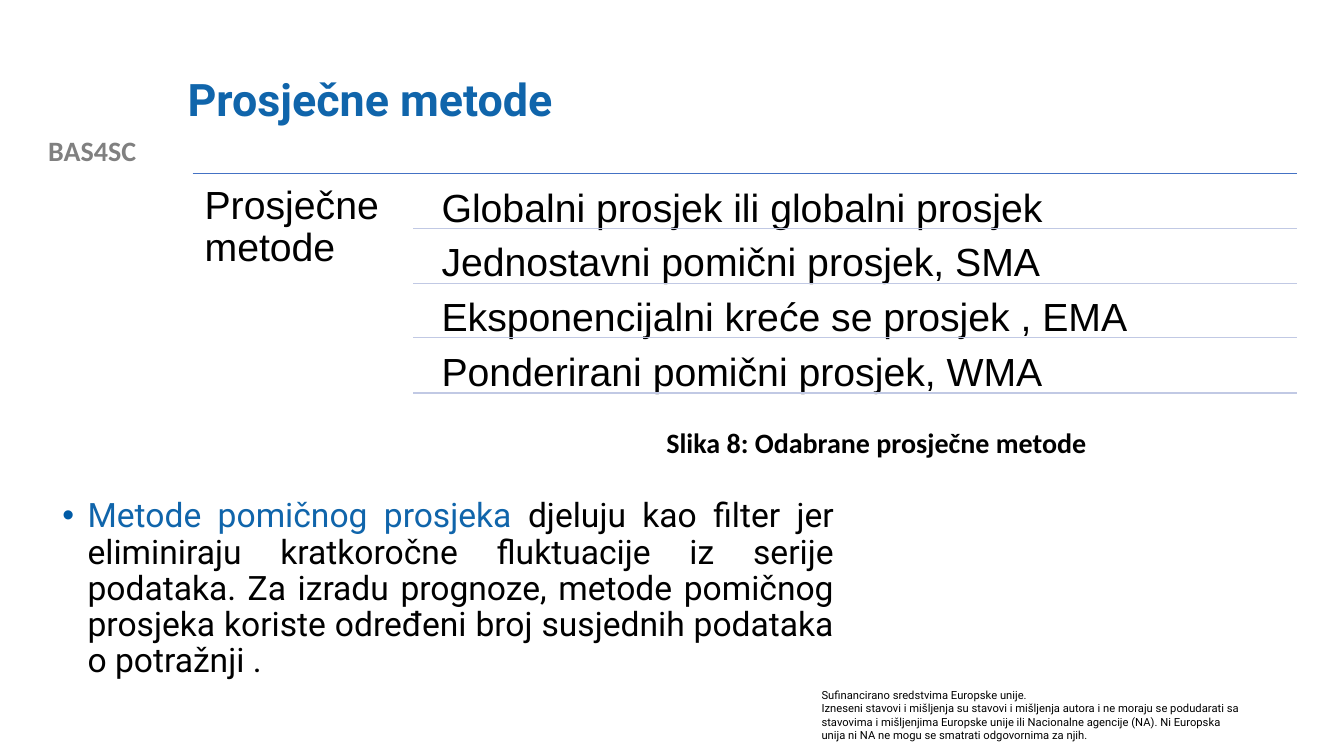
from lxml import etree
from pptx import Presentation
from pptx.dml.color import RGBColor
from pptx.enum.shapes import MSO_CONNECTOR
from pptx.enum.text import MSO_ANCHOR, MSO_AUTO_SIZE, PP_ALIGN
from pptx.oxml.ns import qn
from pptx.util import Pt

LEFT, CENTER, JUSTIFY = PP_ALIGN.LEFT, PP_ALIGN.CENTER, PP_ALIGN.JUSTIFY
TOP, MIDDLE = MSO_ANCHOR.TOP, MSO_ANCHOR.MIDDLE
NO_AUTOFIT = MSO_AUTO_SIZE.NONE
STRAIGHT = MSO_CONNECTOR.STRAIGHT

BLACK = RGBColor(0x00, 0x00, 0x00)
GRAY = RGBColor(0x80, 0x80, 0x80)
BLUE = RGBColor(0x10, 0x65, 0xAB)
BULLET_BLUE = RGBColor(0x01, 0x5B, 0xA6)
TOP_RULE = RGBColor(0x44, 0x72, 0xC4)
ROW_RULE = RGBColor(0xC1, 0xC9, 0xE4)

TITLE = "Prosječne metode"
PROJECT = "BAS4SC"
GROUP = "Prosječne metode"
METHODS = [
    "Globalni prosjek ili globalni prosjek",
    "Jednostavni pomični prosjek, SMA",
    "Eksponencijalni kreće se prosjek , EMA",
    "Ponderirani pomični prosjek, WMA",
]
CAPTION = "Slika 8: Odabrane prosječne metode"
EXPLANATION = [
    ("Metode pomičnog prosjeka ", BLUE),
    ("djeluju kao filter jer eliminiraju kratkoročne fluktuacije iz serije "
     "podataka. Za izradu prognoze, metode pomičnog prosjeka koriste određeni "
     "broj susjednih podataka o potražnji .", BLACK),
]
DISCLAIMER = [
    "Sufinancirano sredstvima Europske unije.",
    "Izneseni stavovi i mišljenja su stavovi i mišljenja autora i ne moraju se "
    "podudarati sa stavovima i mišljenjima Europske unije ili Nacionalne agencije "
    "(NA). Ni Europska unija ni NA ne mogu se smatrati odgovornima za njih.",
]

PX = 9144  # 100 px to the inch
LIST_LEFT, LIST_RIGHT, LIST_TOP = 191, 1286, 172
ROW_LEFT, ROW_RULE_LEFT, ROW_HEIGHT = 426, 410, 52
FIRST_ROW_TOP, LAST_ROW_TOP = 175, 338


def add_bullet(paragraph, color, indent):
    props = paragraph._p.get_or_add_pPr()
    props.set("marL", str(indent * PX))
    props.set("indent", str(-indent * PX))
    bullet_color = etree.SubElement(props, qn("a:buClr"))
    etree.SubElement(bullet_color, qn("a:srgbClr"), val=str(color))
    etree.SubElement(props, qn("a:buFont"), typeface="Arial")
    etree.SubElement(props, qn("a:buChar"), char="•")


def put_text(paragraphs, box, *, size, font, color=BLACK, bold=False, align=LEFT,
             anchor=TOP, spacing=1.0, inset=(10, 5), bullet=None, holder=None):
    """Each paragraph is a string or a list of (text, colour) runs."""
    left, top, width, height = (n * PX for n in box)
    if holder is None:
        holder = slide.shapes.add_textbox(left, top, width, height)
    else:
        holder.left, holder.top, holder.width, holder.height = left, top, width, height
    frame = holder.text_frame
    frame.word_wrap = True
    frame.auto_size = NO_AUTOFIT
    frame.vertical_anchor = anchor
    frame.margin_left = frame.margin_right = inset[0] * PX
    frame.margin_top = frame.margin_bottom = inset[1] * PX
    for i, content in enumerate(paragraphs):
        paragraph = frame.add_paragraph() if i else frame.paragraphs[0]
        if bullet is not None:
            add_bullet(paragraph, bullet, 25)
        paragraph.alignment = align
        paragraph.line_spacing = spacing
        runs = [(content, color)] if isinstance(content, str) else content
        for text, run_color in runs:
            run = paragraph.add_run()
            run.text = text
            run.font.size = Pt(size)
            run.font.name = font
            run.font.bold = bold
            run.font.color.rgb = run_color


def add_rule(left, y, color):
    rule = slide.shapes.add_connector(STRAIGHT, left * PX, y * PX, LIST_RIGHT * PX, y * PX)
    rule.line.color.rgb = color
    rule.line.width = Pt(1)
    etree.SubElement(rule._element.spPr, qn("a:effectLst"))


prs = Presentation()
prs.slide_width, prs.slide_height = 1333 * PX, 750 * PX
slide = prs.slides.add_slide(prs.slide_layouts[5])

put_text([PROJECT], (0, 128, 183, 44), size=20, font="Calibri", color=GRAY,
         bold=True, align=CENTER)
put_text(DISCLAIMER, (805, 678, 437, 64), size=8, font="Roboto")
put_text([TITLE], (176, 40, 1066, 122), size=32, font="Roboto", color=BLUE, bold=True,
         anchor=MIDDLE, spacing=0.9, holder=slide.shapes.title)
put_text([EXPLANATION], (52, 490, 785, 220), size=24, font="Roboto", align=JUSTIFY,
         spacing=0.9, bullet=BULLET_BLUE)

list_format = {"size": 28, "font": "Arial", "spacing": 0.9, "inset": (12, 12)}
add_rule(LIST_LEFT, LIST_TOP, TOP_RULE)
put_text([GROUP], (LIST_LEFT, LIST_TOP, 219, 220), **list_format)
for row, method in enumerate(METHODS):
    row_top = FIRST_ROW_TOP + row * (LAST_ROW_TOP - FIRST_ROW_TOP) // (len(METHODS) - 1)
    put_text([method], (ROW_LEFT, row_top, LIST_RIGHT - ROW_LEFT, ROW_HEIGHT), **list_format)
    add_rule(ROW_RULE_LEFT, row_top + ROW_HEIGHT, ROW_RULE)

put_text([CAPTION], (651, 417, 635, 44), size=20, font="Calibri", bold=True)

prs.save("out.pptx")
